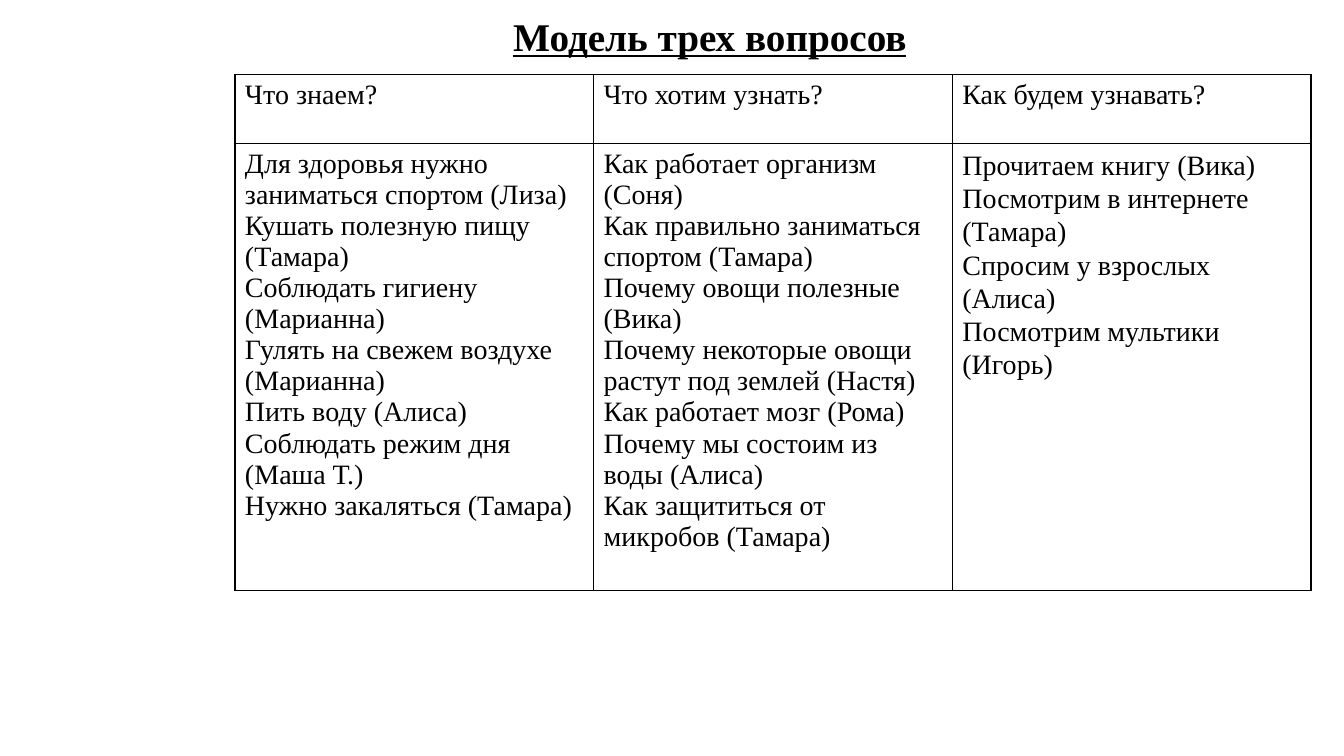
"""Build the "three questions" table slide."""
from lxml import etree
from pptx import Presentation
from pptx.dml.color import RGBColor
from pptx.enum.text import MSO_ANCHOR, MSO_AUTO_SIZE, PP_ALIGN
from pptx.oxml.ns import qn
from pptx.util import Cm, Pt

CENTER = PP_ALIGN.CENTER
MIDDLE = MSO_ANCHOR.MIDDLE
FIT_SHAPE = MSO_AUTO_SIZE.SHAPE_TO_FIT_TEXT
FONT = "Times New Roman"
COLORS = {"text": "000000", "border": "000000"}
HEADER_HEIGHT, BODY_HEIGHT = Cm(1.73), Cm(11.25)
COLUMN_WIDTH = Cm(9.04)

COLUMNS = [
    ("Что знаем?", None, [
        "Для здоровья нужно заниматься спортом (Лиза)",
        "Кушать полезную пищу (Тамара)",
        "Соблюдать гигиену (Марианна)",
        "Гулять на свежем воздухе (Марианна)",
        "Пить воду (Алиса)",
        "Соблюдать режим дня (Маша Т.)",
        "Нужно закаляться (Тамара)",
    ]),
    ("Что хотим узнать?", None, [
        "Как работает организм (Соня)",
        "Как правильно заниматься спортом (Тамара)",
        "Почему овощи полезные (Вика)",
        "Почему некоторые овощи растут под землей (Настя)",
        "Как работает мозг (Рома)",
        "Почему мы состоим из воды (Алиса)",
        "Как защититься от микробов (Тамара)",
    ]),
    ("Как будем узнавать?", 1.07, [
        "Прочитаем книгу (Вика)",
        "Посмотрим в интернете (Тамара)",
        "Спросим у взрослых (Алиса)",
        "Посмотрим мультики (Игорь)",
    ]),
]


def set_font(p, size):
    p.font.name = FONT
    p.font.size = Pt(size)
    p.font.color.rgb = RGBColor.from_string(COLORS["text"])


def fill_cell(cell, lines, spacing=None):
    tf = cell.text_frame
    tf.text = "\n".join(lines)
    for p in tf.paragraphs:
        set_font(p, 20)
        if spacing:
            p.line_spacing = spacing
    tcPr = cell._tc.get_or_add_tcPr()
    for side in ("a:lnL", "a:lnR", "a:lnT", "a:lnB"):
        ln = etree.SubElement(tcPr, qn(side), w=str(Pt(1)))
        solid = etree.SubElement(ln, qn("a:solidFill"))
        etree.SubElement(solid, qn("a:srgbClr"), val=COLORS["border"])
    cell.fill.background()


prs = Presentation()
prs.slide_width, prs.slide_height = Cm(33.87), Cm(19.05)
s = prs.slides.add_slide(prs.slide_layouts[5])

title = s.shapes.title
title.left, title.top, title.width, title.height = Cm(12.62), Cm(0.18), Cm(10.54), Cm(1.45)
tf = title.text_frame
tf.text = "Модель трех вопросов"
tf.word_wrap = False
tf.auto_size = FIT_SHAPE
tf.vertical_anchor = MIDDLE
p = tf.paragraphs[0]
p.alignment = CENTER
set_font(p, 28)
p.font.bold = True
p.font.underline = True

table = s.shapes.add_table(2, len(COLUMNS), Cm(5.92), Cm(1.88),
                           COLUMN_WIDTH * len(COLUMNS), HEADER_HEIGHT + BODY_HEIGHT).table
table.first_row = False
table.horz_banding = False
table.rows[0].height, table.rows[1].height = HEADER_HEIGHT, BODY_HEIGHT
for i, (heading, spacing, answers) in enumerate(COLUMNS):
    table.columns[i].width = COLUMN_WIDTH
    fill_cell(table.cell(0, i), [heading])
    fill_cell(table.cell(1, i), answers, spacing)

prs.save("out.pptx")
